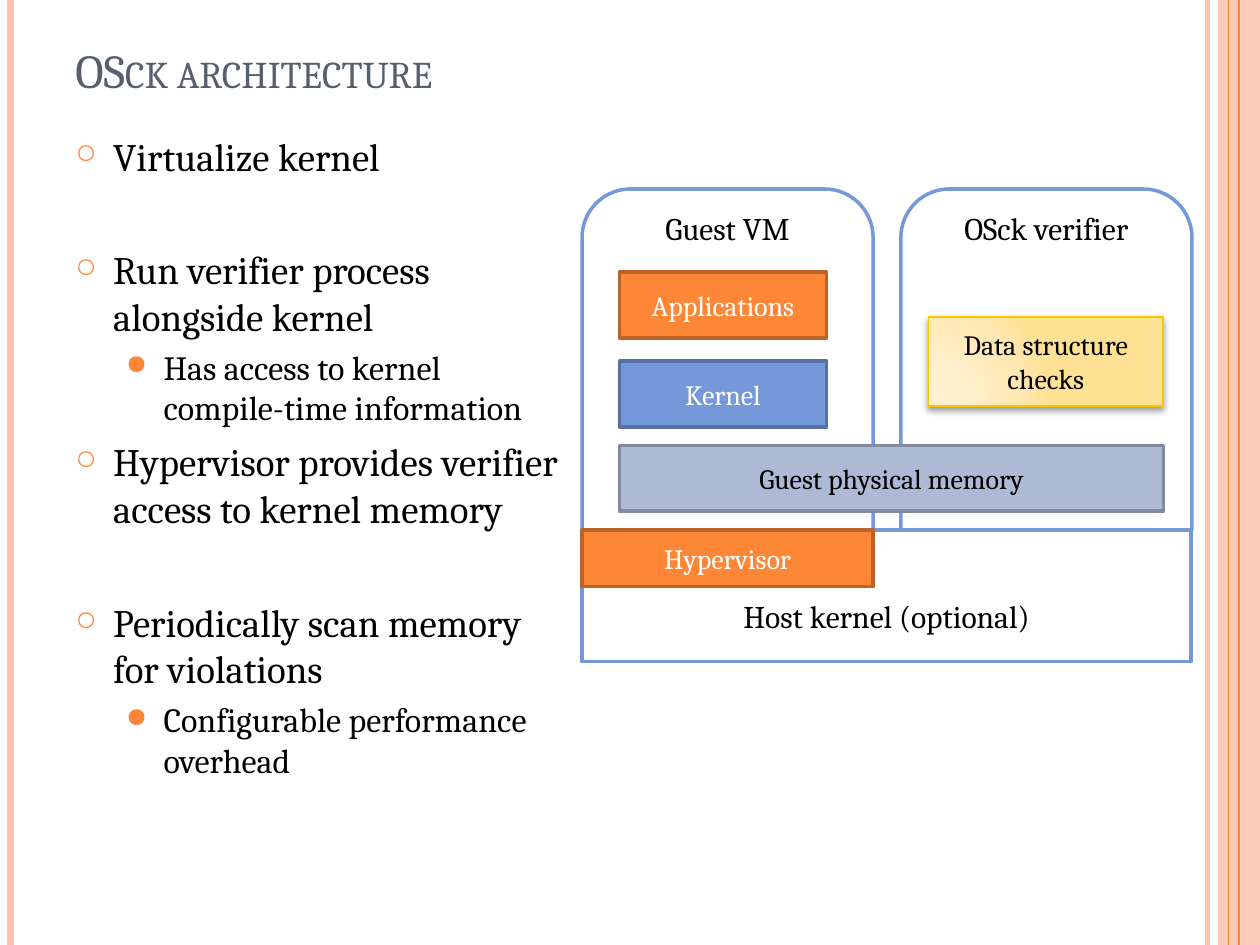
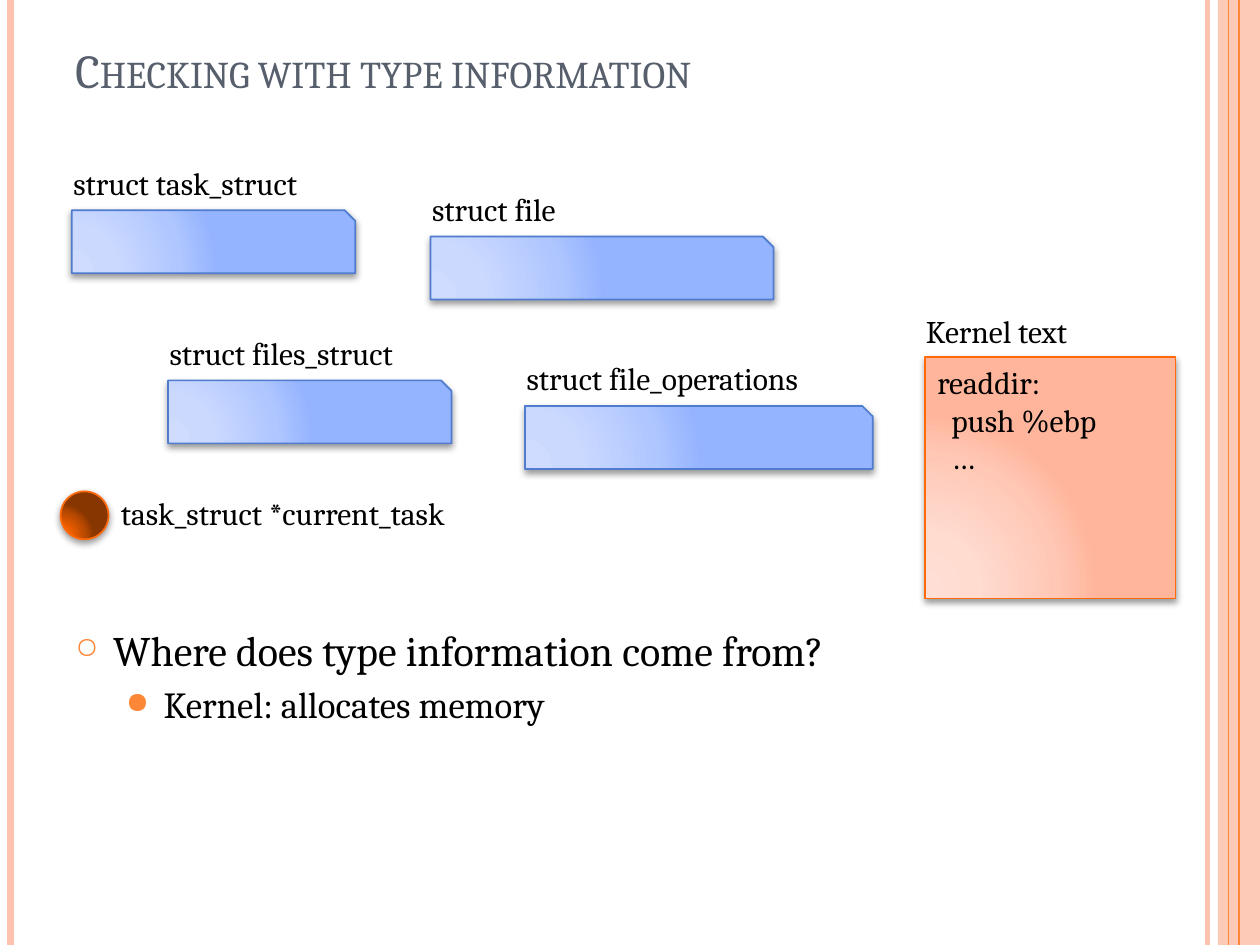
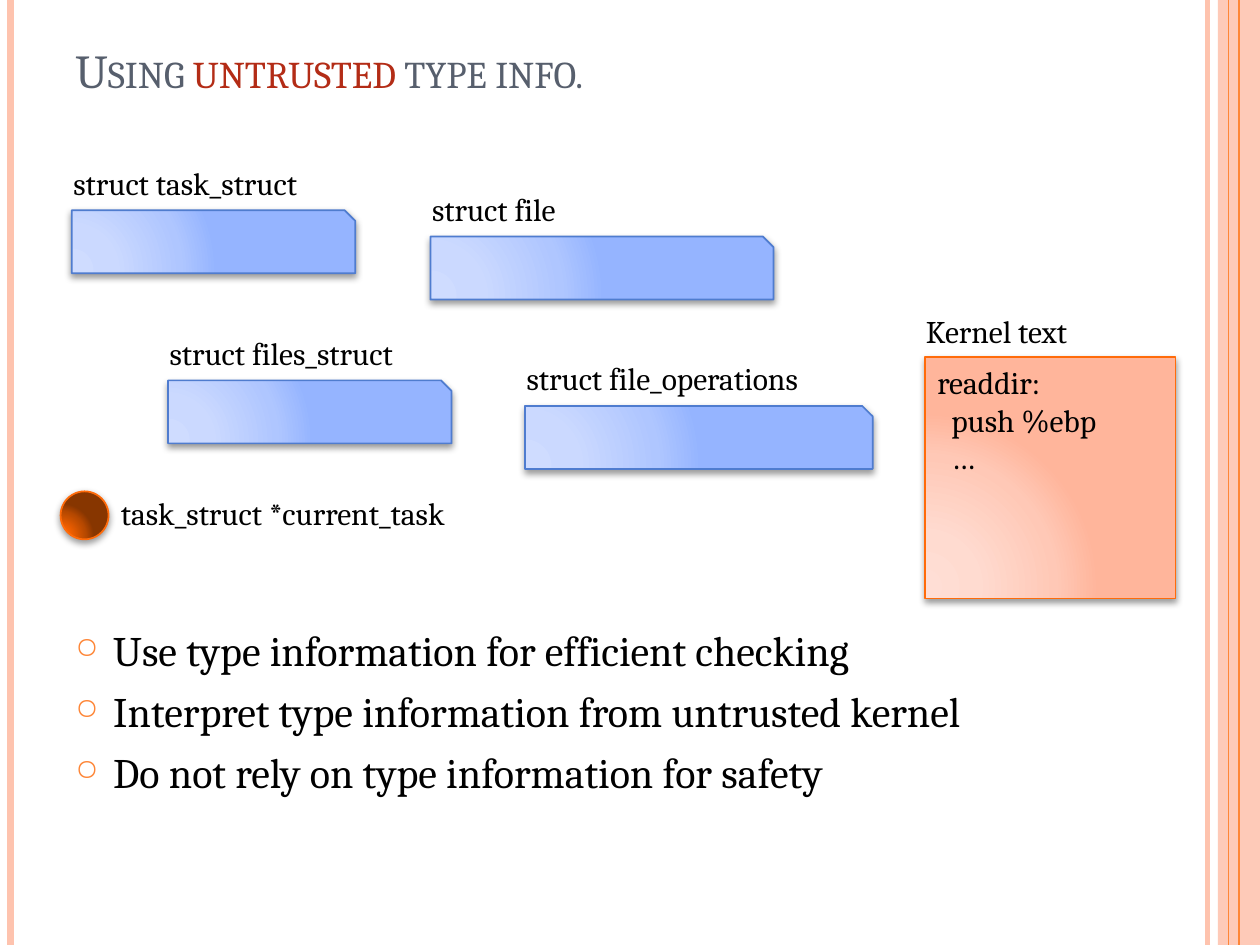
import pptx
import pptx.util
import pptx.dml.color
import pptx.enum.shapes
import pptx.enum.text
import pptx.oxml
import pptx.oxml.ns

Pt = pptx.util.Pt
RGB = pptx.dml.color.RGBColor.from_string
SHAPE = pptx.enum.shapes.MSO_SHAPE
ANCHOR = pptx.enum.text.MSO_ANCHOR
ALIGN = pptx.enum.text.PP_ALIGN
qn = pptx.oxml.ns.qn
A = 'xmlns:a="http://schemas.openxmlformats.org/drawingml/2006/main"'
FONT = "Cambria"

COLORS = {
    "band": "FEC3AE", "orange": "FE8637", "dark orange": "BC6329",
    "blue": "7598D9", "dark blue": "5770A1", "gray": "AEBAD5",
    "dark gray": "818A9E", "gold line": "F8C700", "struct line": "4F7CCF",
    "glow line": "FF6B0A", "title": "575F6D", "alert": "B32C16",
    "black": "000000", "white": "FFFFFF",
}
# Gradient colours at 0, 30, 75 and 100 percent
GRADIENTS = {
    "gold": ["FFF0D1", "FFEFCC", "FFE7B1", "FFE193"],
    "struct": ["CFDCFF", "CBD9FF", "AFC6FF", "95B4FF"],
    "pointer": ["FD6400", "F46100", "B74900", "873600"],
    "code": ["FFDED5", "FFDBD0", "FFC8B6", "FFB59B"],
}


def write(shape, lines, size, color="black", align=ALIGN.LEFT, anchor=ANCHOR.TOP):
    """Put lines of text in a shape and format every run."""
    frame = shape.text_frame
    frame.text = lines
    frame.word_wrap = True
    frame.vertical_anchor = anchor
    for paragraph in frame.paragraphs:
        paragraph.alignment = align
        for run in paragraph.runs:
            run.font.name = FONT
            run.font.size = Pt(size)
            run.font.color.rgb = RGB(COLORS[color])
    return frame


def add_box(slide, kind, place, fill, line=None, width=2):
    """Add a preset shape; a gradient fill brings a soft shadow with it."""
    shape = slide.shapes.add_shape(kind, *map(Pt, place))
    shape.fill.solid()
    if line:
        shape.line.color.rgb = RGB(COLORS[line])
        shape.line.width = Pt(width)
    else:
        shape.line.fill.background()
    shape.shadow.inherit = False
    if fill in COLORS:
        shape.fill.fore_color.rgb = RGB(COLORS[fill])
        return shape
    properties = shape._element.spPr
    stops = "".join(
        f'<a:gs pos="{position}000"><a:srgbClr val="{value}"/></a:gs>'
        for position, value in zip((0, 30, 75, 100), GRADIENTS[fill]))
    properties.replace(properties.find(qn("a:solidFill")), pptx.oxml.parse_xml(
        f'<a:gradFill {A} rotWithShape="1"><a:gsLst>{stops}</a:gsLst><a:path path="circle">'
        '<a:fillToRect l="5000" t="100000" r="120000" b="10000"/></a:path></a:gradFill>'))
    properties.find(qn("a:effectLst")).append(pptx.oxml.parse_xml(
        f'<a:outerShdw {A} blurRad="{Pt(4)}" dist="{Pt(2)}" dir="5400000" rotWithShape="0">'
        '<a:srgbClr val="000000"><a:alpha val="40000"/></a:srgbClr></a:outerShdw>'))
    return shape


presentation = pptx.Presentation()
presentation.slide_width = Pt(720)
presentation.slide_height = Pt(540)

# Each title is a list of (text, colour); each bullet is (level, text, space before)
HALF_BODY = (36, 72, 294, 378)
LOW_BODY = (36, 353.5, 588, 114)
CONTENT = [
    ([("OSck architecture", "title")], HALF_BODY, (22.2, 19.4), [
        (0, "Virtualize kernel", 6),
        (0, "Run verifier process alongside kernel", 38.3),
        (1, "Has access to kernel compile-time information", 4),
        (0, "Hypervisor provides verifier access to kernel memory", 6),
        (0, "Periodically scan memory for violations", 38.3),
        (1, "Configurable performance overhead", 4)]),
    ([("Checking with type information", "title")], LOW_BODY, (24, 21), [
        (0, "Where does type information come from?", 6),
        (1, "Kernel: allocates memory", 4)]),
    ([("Using ", "title"), ("untrusted", "alert"), (" type info.", "title")], LOW_BODY, (24, 21), [
        (0, "Use type information for efficient checking", 6),
        (0, "Interpret type information from untrusted kernel", 6),
        (0, "Do not rely on type information for safety", 6)]),
]
BULLETS = [("○", 70, 21.6), ("●", 80, 50.4)]  # character, percent size, text indent
RULES = [(690, "band", 3), (6, "band", 4.5), (885 / 1.25, "orange", 1.5)]

# Frame, title and bullets of every slide
for title, body_place, sizes, bullets in CONTENT:
    slide = presentation.slides.add_slide(presentation.slide_layouts[6])

    band = add_box(slide, SHAPE.RECTANGLE, (696, 0, 24, 540), "band")
    band_color = band._element.spPr.find(qn("a:solidFill"))[0]
    band_color.append(pptx.oxml.parse_xml(f'<a:alpha {A} val="87000"/>'))
    for x, color, width in RULES + [(702, "orange", 0.75)]:
        rule = slide.shapes.add_connector(
            pptx.enum.shapes.MSO_CONNECTOR.STRAIGHT, Pt(x), Pt(0), Pt(x), Pt(540))
        rule.line.color.rgb = RGB(COLORS[color])
        rule.line.width = Pt(width)
        rule._element.spPr.append(pptx.oxml.parse_xml(f"<a:effectLst {A}/>"))

    title_box = slide.shapes.add_textbox(Pt(36), Pt(21.6), Pt(588), Pt(38))
    title_frame = write(title_box, "", 27, anchor=ANCHOR.BOTTOM)
    for text, color in title:
        run = title_frame.paragraphs[0].add_run()
        run.text = text
        run.font.name = FONT
        run.font.size = Pt(27)
        run.font.color.rgb = RGB(COLORS[color])
        run._r.get_or_add_rPr().set("cap", "small")

    body = slide.shapes.add_textbox(*map(Pt, body_place))
    body_frame = write(body, "\n".join(text for _, text, _ in bullets), sizes[0])
    for paragraph, (level, _, space) in zip(body_frame.paragraphs, bullets):
        character, percent, indent = BULLETS[level]
        paragraph.level = level
        paragraph.space_before = Pt(space)
        paragraph.runs[0].font.size = Pt(sizes[level])
        properties = paragraph._p.get_or_add_pPr()
        properties.set("marL", str(Pt(indent)))
        properties.set("indent", str(Pt(-21.6)))
        for xml in (f'<a:buClr {A}><a:srgbClr val="{COLORS["orange"]}"/></a:buClr>',
                    f'<a:buSzPct {A} val="{percent}000"/>',
                    f'<a:buChar {A} char="{character}"/>'):
            properties.append(pptx.oxml.parse_xml(xml))

architecture, *type_slides = presentation.slides

# Architecture diagram, from back to front
for text, x in (("Guest VM", 332.6), ("OSck verifier", 514.8)):
    machine = add_box(architecture, SHAPE.ROUND_2_SAME_RECTANGLE, (x, 108, 166.3, 195), "white", "blue")
    write(machine, text, 18, align=ALIGN.CENTER)
host = add_box(architecture, SHAPE.RECTANGLE, (332.6, 303, 348, 75), "white", "blue")
write(host, "Host kernel (optional)", 18, align=ALIGN.CENTER, anchor=ANCHOR.BOTTOM)
host.text_frame.margin_bottom = Pt(15.4)
LAYERS = [
    ("Applications", (354, 155.5, 118.3, 37.6), "orange", "dark orange", 2, "white"),
    ("Kernel", (354, 206.4, 118.3, 37.6), "blue", "dark blue", 2, "white"),
    ("Guest physical memory", (354, 254.6, 311, 37.6), "gray", "dark gray", 2, "black"),
    ("Data structure checks", (530.6, 181, 134, 51.1), "gold", "gold line", 1, "black"),
    ("Hypervisor", (332.6, 303, 166.3, 32.2), "orange", "dark orange", 2, "white"),
]
for text, place, fill, line, width, color in LAYERS:
    layer = add_box(architecture, SHAPE.RECTANGLE, place, fill, line, width)
    write(layer, text, 16, color, ALIGN.CENTER, ANCHOR.MIDDLE)

# Kernel structures, the same on both type slides
STRUCTS = [
    ("struct task_struct", 41, 120.2, 162),
    ("struct files_struct", 96, 217.4, 162),
    ("struct file", 246, 135.2, 196),
    ("struct file_operations", 300, 232, 198.7),
]
LABELS = [(text, x - 6.2, y - 30.2) for text, x, y, _ in STRUCTS]
LABELS += [("task_struct *current_task", 62, 278.6), ("Kernel text", 522, 175)]
for slide in type_slides:
    add_box(slide, SHAPE.OVAL, (34.6, 280.8, 27.4, 27.4), "pointer", "glow line", 1)
    for _, x, y, width in STRUCTS:
        add_box(slide, SHAPE.SNIP_1_RECTANGLE, (x, y, width, 36), "struct", "struct line", 1)
    code = add_box(slide, SHAPE.RECTANGLE, (528.5, 203.8, 143.3, 138.2), "code", "glow line", 1)
    code_frame = write(code, "readdir:\npush %ebp\n…", 18)
    for paragraph in code_frame.paragraphs[1:]:
        paragraph._p.get_or_add_pPr().set("marL", str(Pt(8)))
    for text, x, y in LABELS:
        label = slide.shapes.add_textbox(Pt(x), Pt(y), Pt(9 * len(text) + 14), Pt(29))
        label_frame = write(label, text, 18)
        label_frame.word_wrap = False
        label_frame.auto_size = pptx.enum.text.MSO_AUTO_SIZE.SHAPE_TO_FIT_TEXT

presentation.save("out.pptx")
